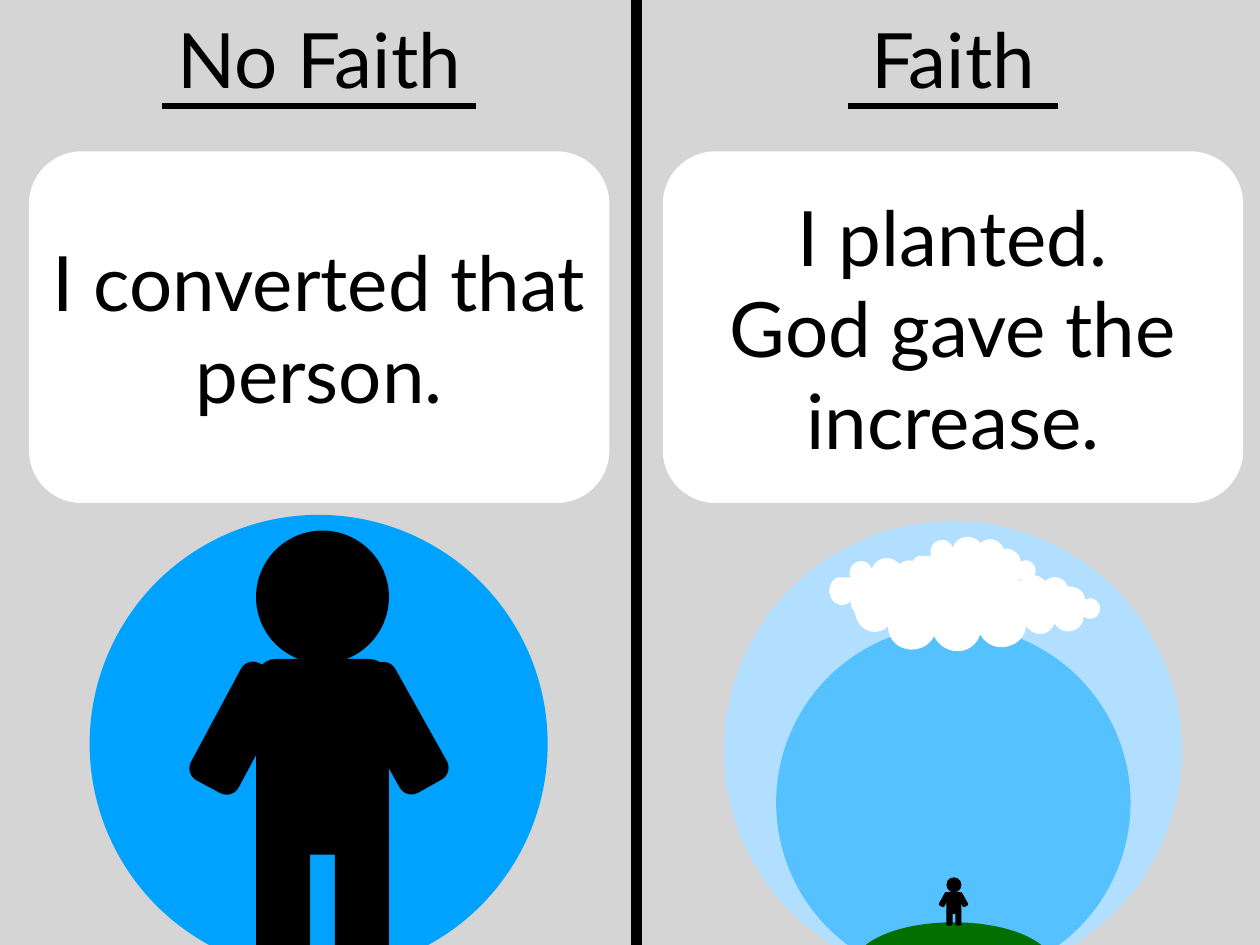
from lxml.etree import SubElement
from pptx import Presentation
from pptx.dml.color import RGBColor
from pptx.enum.shapes import MSO_CONNECTOR, MSO_SHAPE
from pptx.enum.text import MSO_ANCHOR, PP_ALIGN
from pptx.oxml.ns import qn
from pptx.util import Cm, Pt

COLORS = {
    "background": "D5D5D5",
    "black": "000000",
    "white": "FFFFFF",
    "blue": "00A2FF",
    "pale sky": "B2DFFF",
    "sky": "56C1FF",
    "hill": "027001",
}
WIDTH, HEIGHT = 36.12, 27.09

presentation = Presentation()
presentation.slide_width, presentation.slide_height = Cm(WIDTH), Cm(HEIGHT)
slide = presentation.slides.add_slide(presentation.slide_layouts[6])


def add_filled(kind, left, top, width, height, color, corner=None):
    shape = slide.shapes.add_shape(kind, Cm(left), Cm(top), Cm(width), Cm(height))
    shape.shadow.inherit = False
    shape.fill.solid()
    shape.fill.fore_color.rgb = RGBColor.from_string(COLORS[color])
    shape.line.fill.background()
    if corner is not None:
        shape.adjustments[0] = corner
    return shape


def add_black_line(x1, y1, x2, y2, weight):
    line = slide.shapes.add_connector(
        MSO_CONNECTOR.STRAIGHT, Cm(x1), Cm(y1), Cm(x2), Cm(y2))
    line.line.color.rgb = RGBColor.from_string(COLORS["black"])
    line.line.width = Pt(weight)
    SubElement(line._element.spPr, qn("a:effectLst"))


# Background, circles and hill
add_filled(MSO_SHAPE.RECTANGLE, 0, 0, WIDTH, HEIGHT, "background")
for left, top, width, height, color in [
    (2.57, 14.76, 13.13, 13.13, "blue"),
    (20.75, 14.94, 13.13, 13.13, "pale sky"),
    (22.25, 17.93, 10.16, 10.16, "sky"),
    (24.49, 26.44, 5.69, 2.44, "hill"),
]:
    add_filled(MSO_SHAPE.OVAL, left, top, width, height, color)

# The same person, large and small: x, y, width, height, corner, rotation
BODY_PARTS = [
    (0, 3.68, 3.81, 5.61, 0.15, 0),
    (0, 8.43, 1.55, 3.81, 0.25, 0),
    (2.26, 8.43, 1.55, 3.81, 0.25, 0),
    (-1.24, 3.76, 1.55, 3.81, 0.25, 28.2),
    (3.28, 3.76, 1.55, 3.81, 0.25, 330.8),
]
for left, top, scale in [(7.34, 15.21, 1), (27.13, 25.15, 0.113)]:
    add_filled(MSO_SHAPE.OVAL, left, top, 3.81 * scale, 3.81 * scale, "black")
    for x, y, width, height, corner, rotation in BODY_PARTS:
        part = add_filled(
            MSO_SHAPE.ROUNDED_RECTANGLE, left + x * scale, top + y * scale,
            width * scale, height * scale, "black", corner)
        part.rotation = rotation

# Cloud outline: Bezier curves, each two control points and an end point
CLOUD_WIDTH = 224
CLOUD_START = (2, 67)
CLOUD_CURVES = [
    (4, 75), (11, 81), (19, 83),
    (26, 84), (33, 82), (38, 77),
    (38, 84), (41, 92), (47, 97),
    (61, 108), (82, 104), (90, 88),
    (95, 99), (107, 106), (119, 105),
    (130, 104), (139, 96), (142, 86),
    (149, 99), (164, 104), (178, 98),
    (188, 94), (194, 84), (194, 74),
    (205, 83), (222, 76), (223, 62),
    (225, 48), (210, 37), (197, 44),
    (196, 35), (191, 28), (183, 24),
    (178, 21), (172, 20), (166, 21),
    (162, 10), (152, 3), (140, 4),
    (134, 5), (129, 7), (125, 11),
    (119, 3), (109, -1), (99, 0),
    (88, 1), (79, 9), (76, 19),
    (73, 9), (62, 3), (52, 6),
    (40, 8), (33, 22), (38, 34),
    (30, 34), (22, 34), (14, 34),
    (10, 36), (6, 40), (4, 44),
    (0, 51), (-1, 60), (2, 67),
]

# Four clouds; every three straight segments become one curve
for left, top, width in [
    (24.49, 16, 5.69), (23.77, 16, 3.61), (27.94, 16.48, 3.61), (26.09, 15.39, 3.61),
]:
    builder = slide.shapes.build_freeform(*CLOUD_START, scale=Cm(width) / CLOUD_WIDTH)
    builder.add_line_segments(CLOUD_CURVES, close=True)
    cloud = builder.convert_to_shape(Cm(left), Cm(top))
    cloud.shadow.inherit = False
    cloud.fill.solid()
    cloud.fill.fore_color.rgb = RGBColor.from_string(COLORS["white"])
    cloud.line.fill.background()
    segments = list(cloud._element.iter(qn("a:lnTo")))
    for curve, second, third in zip(segments[::3], segments[1::3], segments[2::3]):
        curve.tag = qn("a:cubicBezTo")
        for segment in (second, third):
            curve.append(segment[0])
            segment.getparent().remove(segment)

# Divider
add_black_line(18.24, 0, 18.24, HEIGHT, 9)

# Panels: centre, title, underline length, card paragraphs
for center, title, underline, statements in [
    (9.15, "No Faith", 9, ["I converted that person."]),
    (27.32, "Faith", 6, ["I planted.", "God gave the increase."]),
]:
    card = add_filled(MSO_SHAPE.ROUNDED_RECTANGLE, center - 8.32, 4.34,
                      16.64, 10.08, "white", 0.15)
    heading = slide.shapes.add_textbox(Cm(center - 8.05), Cm(0.03), Cm(16.1), Cm(3.25))
    add_black_line(center - underline / 2, 3.05, center + underline / 2, 3.05, 5)

    for shape, lines in [(card, statements), (heading, [title])]:
        frame = shape.text_frame
        frame.word_wrap = True
        frame.vertical_anchor = MSO_ANCHOR.MIDDLE
        frame.margin_left = frame.margin_right = Cm(0.15)
        frame.margin_top = frame.margin_bottom = Cm(0.15)
        for index, line in enumerate(lines):
            paragraph = frame.add_paragraph() if index else frame.paragraphs[0]
            paragraph.alignment = PP_ALIGN.CENTER
            run = paragraph.add_run()
            run.text = line
            run.font.name = "Lato"
            run.font.size = Pt(62)
            run.font.color.rgb = RGBColor.from_string(COLORS["black"])

presentation.save("out.pptx")
